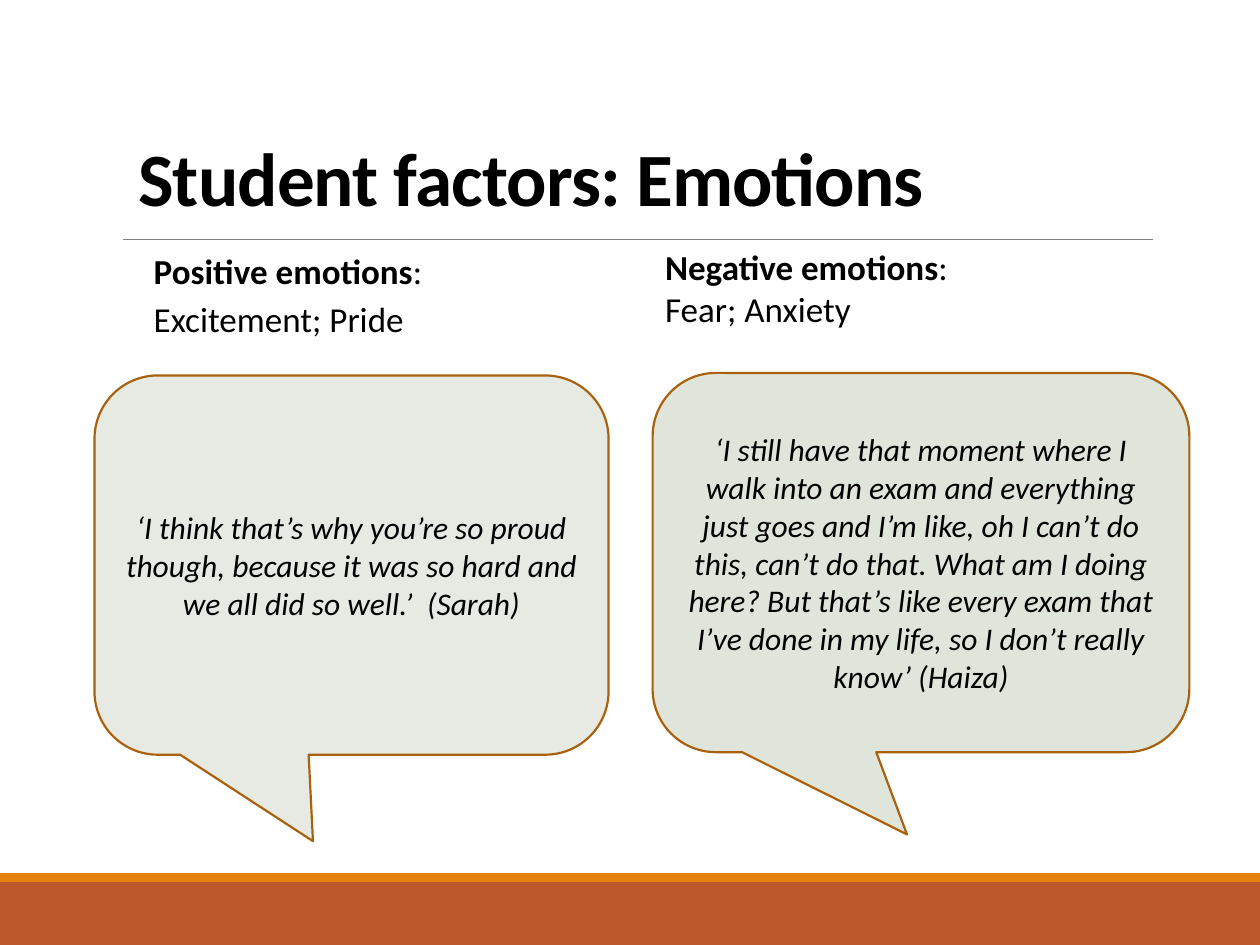
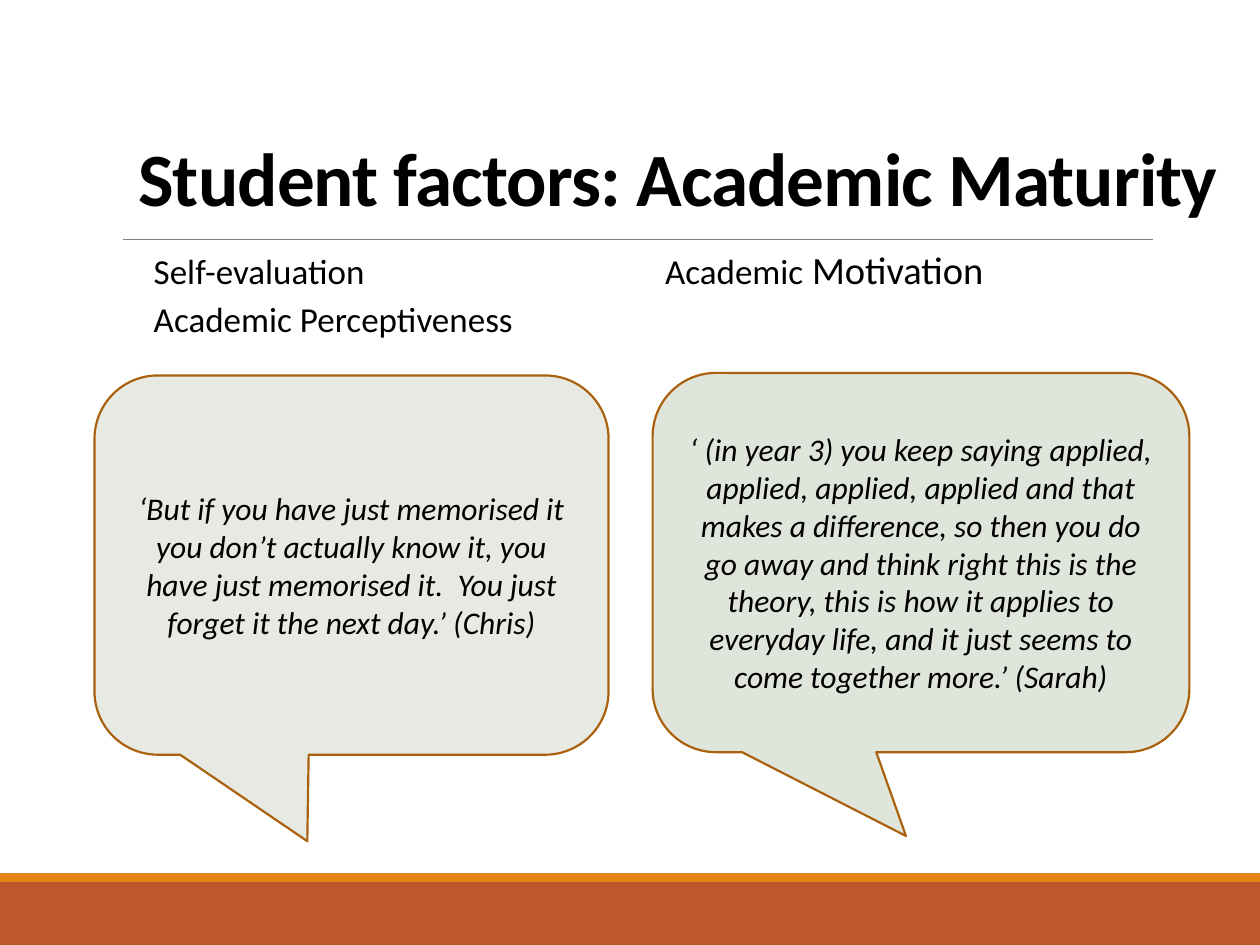
from lxml import etree
from pptx import Presentation
from pptx import util as u
from pptx.dml.color import RGBColor
from pptx.enum import shapes, text
from pptx.oxml import ns

COLOURS = {
    "text": "000000",
    "band": "BD582C",
    "stripe": "E48312",
    "rule": "808080",
    "left_bubble": "E6EAE2",
    "right_bubble": "E0E5DB",
    "bubble_line": "A9610D",
}
FONT = "Calibri"
LEFT_BUBBLE_BOX = (0.75, 2.98, 4.08, 3.01)
RIGHT_BUBBLE_BOX = (5.18, 2.96, 4.26, 3.01)

SLIDES = [
    {
        "title": "Student factors: Emotions",
        "left": [[("Positive emotions", {"bold": True}), (":", {})],
                 [("Excitement; Pride", {})]],
        "right": [[("Negative emotions", {"bold": True}), (":", {})],
                  [("Fear; Anxiety", {})]],
        "left_quote": "‘I think that’s why you’re so proud though, because it was so "
                      "hard and we all did so well.’  (Sarah)",
        "right_quote": "‘I still have that moment where I walk into an exam and "
                       "everything just goes and I’m like, oh I can’t do this, can’t "
                       "do that. What am I doing here? But that’s like every exam that "
                       "I’ve done in my life, so I don’t really know’ (Haiza)",
        "left_tail": (-0.075, 0.728),
        "right_tail": (-0.026, 0.717),
    },
    {
        "title": "Student factors: Academic Maturity",
        "left": [[("Self-evaluation", {})], [("Academic Perceptiveness", {})]],
        "right": [[("Academic", {}), (" Motivation", {"size": 22})]],
        "left_quote": "‘But if you have just memorised it you don’t actually know it, "
                      "you have just memorised it.  You just forget it the next day.’ "
                      "(Chris)",
        "right_quote": "‘ (in year 3) you keep saying applied, applied, applied, applied "
                       "and that makes a difference, so then you do go away and think "
                       "right this is the theory, this is how it applies to everyday "
                       "life, and it just seems to come together more.’ (Sarah)",
        "left_tail": (-0.086, 0.728),
        "right_tail": (-0.028, 0.721),
    },
]


def colour(name):
    """Return the named colour."""
    return RGBColor.from_string(COLOURS[name])


def inches(box):
    """Convert a box of numbers to lengths."""
    return [u.Inches(value) for value in box]


def add_run(paragraph, words, size=20, bold=False, italic=False, tracking=None):
    """Add formatted text to a paragraph."""
    run = paragraph.add_run()
    run.text = words
    font = run.font
    font.name, font.size = FONT, u.Pt(size)
    font.bold, font.italic = bold, italic
    font.color.rgb = colour("text")
    if tracking is not None:
        run._r.get_or_add_rPr().set("spc", str(round(tracking * 100)))


def add_text_box(slide, box, paragraphs, anchor=text.MSO_ANCHOR.TOP, indent=0.1,
                 line_spacing=None, before=0, after=0):
    """Add a wrapped text box from paragraphs of (words, format) pairs."""
    frame = slide.shapes.add_textbox(*inches(box)).text_frame
    frame.word_wrap = True
    frame.vertical_anchor = anchor
    frame.margin_left = u.Inches(indent)
    for index, runs in enumerate(paragraphs):
        paragraph = frame.add_paragraph() if index else frame.paragraphs[0]
        paragraph.line_spacing = line_spacing
        paragraph.space_before, paragraph.space_after = u.Pt(before), u.Pt(after)
        for words, style in runs:
            add_run(paragraph, words, **style)


def add_filled_shape(slide, kind, box, fill, line=None):
    """Add a flat preset shape with an optional outline."""
    shape = slide.shapes.add_shape(kind, *inches(box))
    shape.shadow.inherit = False
    shape.fill.solid()
    shape.fill.fore_color.rgb = colour(fill)
    if line:
        shape.line.color.rgb = colour(line)
        shape.line.width = u.Pt(1.25)
    else:
        shape.line.fill.background()
    return shape


def add_frame(slide):
    """Add the footer bands and the rule under the title."""
    rectangle = shapes.MSO_SHAPE.RECTANGLE
    add_filled_shape(slide, rectangle, (0, 7, 10, 0.5), "band")
    add_filled_shape(slide, rectangle, (0, 6.93, 10, 0.07), "stripe")
    rule = slide.shapes.add_connector(shapes.MSO_CONNECTOR.STRAIGHT,
                                      *inches((0.98, 1.9, 9.15, 1.9)))
    rule.line.color.rgb = colour("rule")
    rule.line.width = u.Pt(0.5)
    etree.SubElement(rule._element.spPr, ns.qn("a:effectLst"))


def add_title(slide, words):
    """Add the slide title, resting on the rule."""
    style = {"size": 43, "bold": True, "tracking": -0.5}
    add_text_box(slide, (1, 0.44, 9, 1.37), [[(words, style)]],
                 anchor=text.MSO_ANCHOR.BOTTOM, line_spacing=0.85)


def add_quote(slide, box, words, tail, fill):
    """Add a speech bubble whose tail ends at a fraction of its box."""
    bubble = add_filled_shape(slide, shapes.MSO_SHAPE.ROUNDED_RECTANGULAR_CALLOUT,
                              box, fill, "bubble_line")
    for index, value in enumerate((*tail, 0.167)):
        bubble.adjustments[index] = value
    frame = bubble.text_frame
    frame.word_wrap = True
    frame.vertical_anchor = text.MSO_ANCHOR.MIDDLE
    paragraph = frame.paragraphs[0]
    paragraph.alignment = text.PP_ALIGN.CENTER
    add_run(paragraph, words, size=18, italic=True)


def add_factor_slide(presentation, content):
    """Add a slide that sets two factors and their quotes side by side."""
    slide = presentation.slides.add_slide(presentation.slide_layouts[6])
    add_frame(slide)
    add_title(slide, content["title"])
    add_text_box(slide, (1, 1.97, 4.18, 0.83), content["left"], indent=0.22,
                 line_spacing=0.9, before=2, after=4)
    add_quote(slide, LEFT_BUBBLE_BOX, content["left_quote"],
              content["left_tail"], "left_bubble")
    add_quote(slide, RIGHT_BUBBLE_BOX, content["right_quote"],
              content["right_tail"], "right_bubble")
    add_text_box(slide, (5.18, 1.9, 3.94, 0.77), content["right"])


def main():
    """Build and save the presentation."""
    presentation = Presentation()
    presentation.slide_width, presentation.slide_height = inches((10, 7.5))
    for content in SLIDES:
        add_factor_slide(presentation, content)
    presentation.save("out.pptx")


if __name__ == "__main__":
    main()
